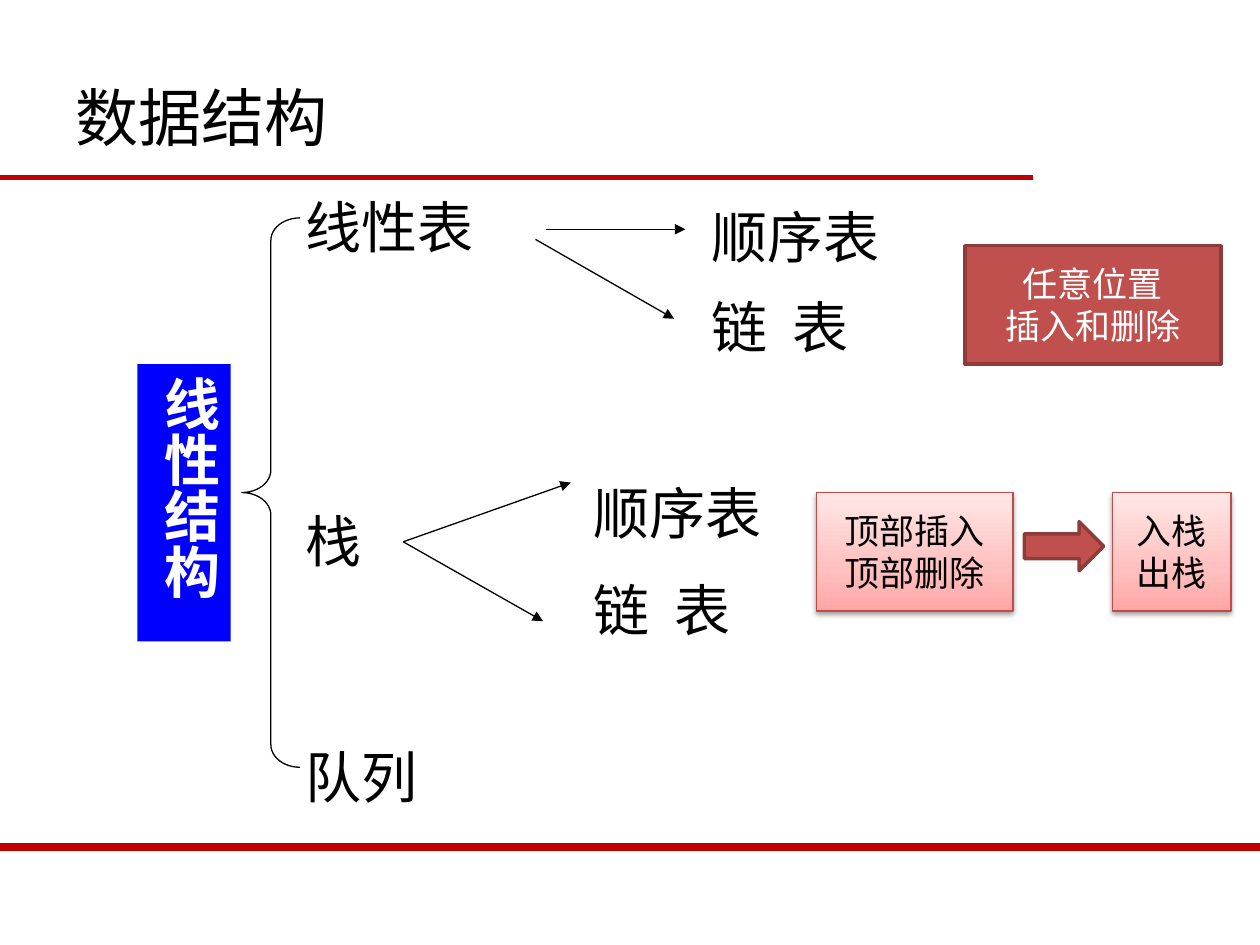
from copy import deepcopy
from lxml import etree
from pptx import Presentation
from pptx.dml.color import RGBColor
from pptx.enum.shapes import MSO_CONNECTOR, MSO_SHAPE
from pptx.enum.text import MSO_ANCHOR, PP_ALIGN
from pptx.oxml.ns import qn
from pptx.util import Inches, Pt

STRAIGHT = MSO_CONNECTOR.STRAIGHT
RECTANGLE, BRACE, ARROW = MSO_SHAPE.RECTANGLE, MSO_SHAPE.LEFT_BRACE, MSO_SHAPE.RIGHT_ARROW
TOP, MIDDLE = MSO_ANCHOR.TOP, MSO_ANCHOR.MIDDLE
LEFT, CENTER = PP_ALIGN.LEFT, PP_ALIGN.CENTER

SANS, COMIC = "Noto Sans CJK SC", "Comic Neue"
BLACK, WHITE, BLUE = "000000", "FFFFFF", "0000FF"
RULE, RED, DARK_RED, PINK_EDGE = "C00000", "C0504D", "8E3B39", "BF4C48"
PINK_STOPS = [(0, "FFA6A5"), (0.35, "FFC0BF"), (1, "FFE7E7")]

TITLE = "数据结构"
ROOT = "线性结构"
STRUCTURES = [("线性表", 1.48), ("栈", 3.97), ("队列", 5.84)]
STORAGES = [
    ("顺序表", 5.55, 1.56), ("链  表", 5.55, 2.27),
    ("顺序表", 4.61, 3.75), ("链  表", 4.61, 4.52),
]
RULES = [(1.41, 8.2, 3), (6.72, 10, 4.5)]
BRANCHES = [
    (4.33, 1.82, 5.44, 1.82), (4.25, 1.9, 5.35, 2.53),
    (3.2, 4.3, 4.53, 3.83), (3.2, 4.3, 4.31, 4.93),
]
LIST_NOTE = ["任意位置\n插入和删除"]
STACK_NOTES = [(6.48, 1.56, ["顶部插入\n顶部删除"]), (8.83, 0.94, ["入栈", "出栈"])]
STACK_TOP, NOTE_HEIGHT = 3.91, 0.94
LABEL_WIDTH, LABEL_HEIGHT = 1.55, 0.64


def color(value):
    return RGBColor.from_string(value)


def write(box, paragraphs, size, ink=BLACK, font=SANS, bold=False,
          align=LEFT, anchor=TOP, wrap=True):
    frame = box.text_frame
    frame.word_wrap = wrap
    frame.vertical_anchor = anchor
    for index, text in enumerate(paragraphs):
        para = frame.add_paragraph() if index else frame.paragraphs[0]
        para.alignment = align
        for number, line in enumerate(text.split("\n")):
            if number:
                para.add_line_break()
            span = para.add_run()
            span.text = line
            span.font.name = font
            span.font.size = Pt(size)
            span.font.bold = bold
            span.font.color.rgb = color(ink)
            east_asian = etree.SubElement(span.font._element, qn("a:ea"))
            east_asian.set("typeface", font)


def add_text(page, text, left, top, width, height, size, **style):
    box = page.shapes.add_textbox(Inches(left), Inches(top), Inches(width), Inches(height))
    write(box, [text], size, **style)


def add_line(page, x1, y1, x2, y2, ink, weight, head=False):
    line = page.shapes.add_connector(STRAIGHT, Inches(x1), Inches(y1), Inches(x2), Inches(y2))
    line.line.color.rgb = color(ink)
    line.line.width = Pt(weight)
    if head:
        etree.SubElement(line.line._get_or_add_ln(), qn("a:tailEnd")).set("type", "triangle")
    etree.SubElement(line._element.spPr, qn("a:effectLst"))


def add_shape(page, kind, left, top, width, height, fill=None, edge=None, weight=0.75):
    shape = page.shapes.add_shape(kind, Inches(left), Inches(top), Inches(width), Inches(height))
    shape.shadow.inherit = False
    if fill:
        shape.fill.solid()
        shape.fill.fore_color.rgb = color(fill)
    else:
        shape.fill.background()
    if edge:
        shape.line.color.rgb = color(edge)
        shape.line.width = Pt(weight)
    else:
        shape.line.fill.background()
    return shape


def shade_pink(shape):
    shape.fill.gradient()
    shape.fill.gradient_angle = 90
    stop_list = shape._element.spPr.find(".//" + qn("a:gsLst"))
    stop_list.append(deepcopy(stop_list[0]))
    for stop, (position, tint) in zip(shape.fill.gradient_stops, PINK_STOPS):
        stop.position = position
        stop.color.rgb = color(tint)
    effects = shape._element.spPr.find(qn("a:effectLst"))
    shadow = etree.SubElement(effects, qn("a:outerShdw"), blurRad=str(Pt(3.1)),
                              dist=str(Pt(1.6)), dir="5400000", rotWithShape="0")
    ink = etree.SubElement(shadow, qn("a:srgbClr"), val=BLACK)
    etree.SubElement(ink, qn("a:alpha"), val="38000")


def main():
    deck = Presentation()
    deck.slide_width, deck.slide_height = Inches(10), Inches(7.5)
    page = deck.slides.add_slide(deck.slide_layouts[6])

    for y, end, weight in RULES:
        add_line(page, 0, y, end, y, RULE, weight)
    add_text(page, TITLE, 0.5, 0.3, 9, 1.25, 36, anchor=MIDDLE)

    for text, top in STRUCTURES:
        add_text(page, text, 2.33, top, LABEL_WIDTH, LABEL_HEIGHT, 32, wrap=False)
    for text, left, top in STORAGES:
        add_text(page, text, left, top, LABEL_WIDTH, LABEL_HEIGHT, 32, wrap=False)
    for branch in BRANCHES:
        add_line(page, *branch, BLACK, 0.75, head=True)

    brace = add_shape(page, BRACE, 1.92, 1.73, 0.46, 4.36, edge=BLACK)
    brace.adjustments[0] = 0.39
    root = add_shape(page, RECTANGLE, 1.09, 2.89, 0.74, 2.2, fill=BLUE)
    write(root, [ROOT], 32, ink=WHITE, font=COMIC, bold=True, align=CENTER)
    root.text_frame._txBody.bodyPr.set("vert", "eaVert")

    note = add_shape(page, RECTANGLE, 7.66, 1.95, 2.03, NOTE_HEIGHT, RED, DARK_RED, 2)
    write(note, LIST_NOTE, 20, ink=WHITE, align=CENTER, anchor=MIDDLE)
    for left, width, paragraphs in STACK_NOTES:
        note = add_shape(page, RECTANGLE, left, STACK_TOP, width, NOTE_HEIGHT, edge=PINK_EDGE)
        shade_pink(note)
        write(note, paragraphs, 20, align=CENTER, anchor=MIDDLE)
    add_shape(page, ARROW, 8.13, 4.14, 0.63, 0.39, RED, DARK_RED, 2)

    deck.save("out.pptx")


if __name__ == "__main__":
    main()
